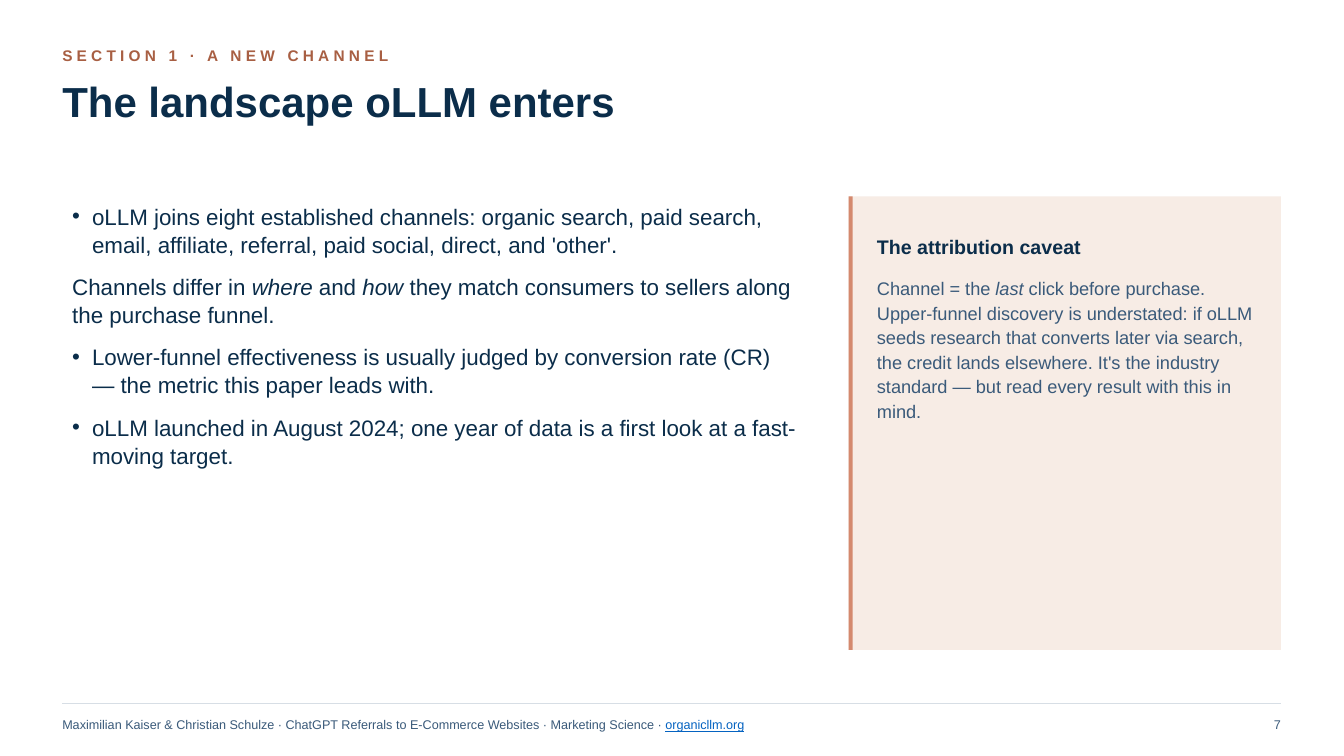
from dataclasses import dataclass

from lxml.etree import SubElement
from pptx import Presentation
from pptx.dml.color import RGBColor
from pptx.enum.shapes import MSO_CONNECTOR as Connector, MSO_SHAPE as Shape
from pptx.enum.text import MSO_ANCHOR as Anchor, MSO_AUTO_SIZE as AutoSize, PP_ALIGN as Align
from pptx.oxml.ns import qn
from pptx.util import Cm, Pt


@dataclass(frozen=True)
class Theme:
    font: str = "Arial"
    navy: str = "0B2D4A"
    slate: str = "3A5A7A"
    rust: str = "A85F43"
    coral: str = "D4896E"
    blush: str = "F7ECE5"
    rule: str = "D7DEE5"
    link: str = "0563C1"
    title: int = 30
    body: int = 16
    card_head: int = 14
    card_body: int = 13
    kicker: int = 11
    footer: int = 9


theme = Theme()
rgb = RGBColor.from_string

LEFT, RIGHT = 1.57, 32.28
WIDTH = RIGHT - LEFT
CONTENT_TOP = 4.95
CARD_LEFT, CARD_HEIGHT = 21.39, 11.43
CARD_TEXT_LEFT, CARD_TEXT_WIDTH = 22.1, 9.63
FOOTER_TOP, FOOTER_HEIGHT = 17.88, 0.76


def place(box, left, top, width, height, anchor=Anchor.TOP, inset=0):
    """Position a text-bearing shape, prepare its frame and return the frame."""
    box.left, box.top, box.width, box.height = Cm(left), Cm(top), Cm(width), Cm(height)
    frame = box.text_frame
    frame.word_wrap = True
    frame.auto_size = AutoSize.NONE
    frame.vertical_anchor = anchor
    frame.margin_left = frame.margin_right = Cm(inset)
    frame.margin_top = frame.margin_bottom = Cm(inset / 2)
    return frame


def write(paragraph, text, size, color, bold=False, align=Align.LEFT, spacing=1.0):
    """Fill a paragraph; words between asterisks become italic."""
    paragraph.alignment = align
    paragraph.line_spacing = spacing
    paragraph.space_before = Pt(0)
    font = paragraph.font
    font.name, font.size, font.bold = theme.font, Pt(size), bold
    font.color.rgb = rgb(color)
    for index, part in enumerate(text.split("*")):
        run = paragraph.add_run()
        run.text = part
        if index % 2:
            run.font.italic = True
    return paragraph


deck = Presentation()
deck.slide_width, deck.slide_height = Cm(33.87), Cm(19.05)
slide = deck.slides.add_slide(deck.slide_layouts[1])
shapes = slide.shapes

# Heading
kicker = place(shapes.add_textbox(0, 0, 0, 0), LEFT, 1.02, WIDTH, 0.76, Anchor.MIDDLE)
section = write(kicker.paragraphs[0], "SECTION 1 · A NEW CHANNEL", theme.kicker, theme.rust, bold=True)
section.runs[0]._r.get_or_add_rPr().set("spc", "300")

heading = place(shapes.title, LEFT, 1.88, WIDTH, 2.41)
write(heading.paragraphs[0], "The landscape oLLM enters", theme.title, theme.navy, bold=True, spacing=1.02)

# Channel points: (text, bulleted)
points = [
    ("oLLM joins eight established channels: organic search, paid search, email, "
     "affiliate, referral, paid social, direct, and 'other'.", True),
    ("Channels differ in *where* and *how* they match consumers to sellers along "
     "the purchase funnel.", False),
    ("Lower-funnel effectiveness is usually judged by conversion rate (CR) — "
     "the metric this paper leads with.", True),
    ("oLLM launched in August 2024; one year of data is a first look at a "
     "fast-moving target.", True),
]
body = place(slide.placeholders[1], LEFT, CONTENT_TOP, 18.8, 11.68, inset=0.25)
for index, (text, bulleted) in enumerate(points):
    point = body.add_paragraph() if index else body.paragraphs[0]
    properties = point._p.get_or_add_pPr()
    hang = Cm(0.5) if bulleted else 0
    properties.set("marL", str(hang))
    properties.set("indent", str(-hang))
    if bulleted:
        SubElement(properties, qn("a:buChar")).set("char", "•")
    else:
        SubElement(properties, qn("a:buNone"))
    point.space_after = Pt(10)
    write(point, text, theme.body, theme.navy, spacing=1.05)

# Caveat card with its accent edge
for width, color in ((RIGHT - CARD_LEFT, theme.blush), (0.1, theme.coral)):
    panel = shapes.add_shape(Shape.RECTANGLE, Cm(CARD_LEFT), Cm(CONTENT_TOP), Cm(width), Cm(CARD_HEIGHT))
    panel.shadow.inherit = False
    panel.fill.solid()
    panel.fill.fore_color.rgb = rgb(color)
    panel.line.fill.background()

card_head = place(shapes.add_textbox(0, 0, 0, 0), CARD_TEXT_LEFT, 5.59, CARD_TEXT_WIDTH, 1.27, Anchor.MIDDLE)
write(card_head.paragraphs[0], "The attribution caveat", theme.card_head, theme.navy, bold=True)

card_body = place(shapes.add_textbox(0, 0, 0, 0), CARD_TEXT_LEFT, 6.93, CARD_TEXT_WIDTH, 8.89)
write(
    card_body.paragraphs[0],
    "Channel = the *last* click before purchase. Upper-funnel discovery is understated: "
    "if oLLM seeds research that converts later via search, the credit lands elsewhere. "
    "It's the industry standard — but read every result with this in mind.",
    theme.card_body, theme.slate, spacing=1.12,
)

# Footer
rule = shapes.add_connector(Connector.STRAIGHT, Cm(LEFT), Cm(17.73), Cm(RIGHT), Cm(17.73))
rule.line.color.rgb = rgb(theme.rule)
rule.line.width = Pt(0.5)
SubElement(rule._element.spPr, qn("a:effectLst"))

source = place(shapes.add_textbox(0, 0, 0, 0), LEFT, FOOTER_TOP, WIDTH - 2.54, FOOTER_HEIGHT, Anchor.MIDDLE)
credit = write(
    source.paragraphs[0],
    "Maximilian Kaiser & Christian Schulze · ChatGPT Referrals to E-Commerce Websites · Marketing Science · ",
    theme.footer, theme.slate,
)
site = credit.add_run()
site.text = "organicllm.org"
site.font.underline = True
site.font.color.rgb = rgb(theme.link)

number = place(shapes.add_textbox(0, 0, 0, 0), RIGHT - 2.54, FOOTER_TOP, 2.54, FOOTER_HEIGHT, Anchor.MIDDLE)
write(number.paragraphs[0], "7", theme.footer, theme.slate, align=Align.RIGHT)

deck.save("out.pptx")
